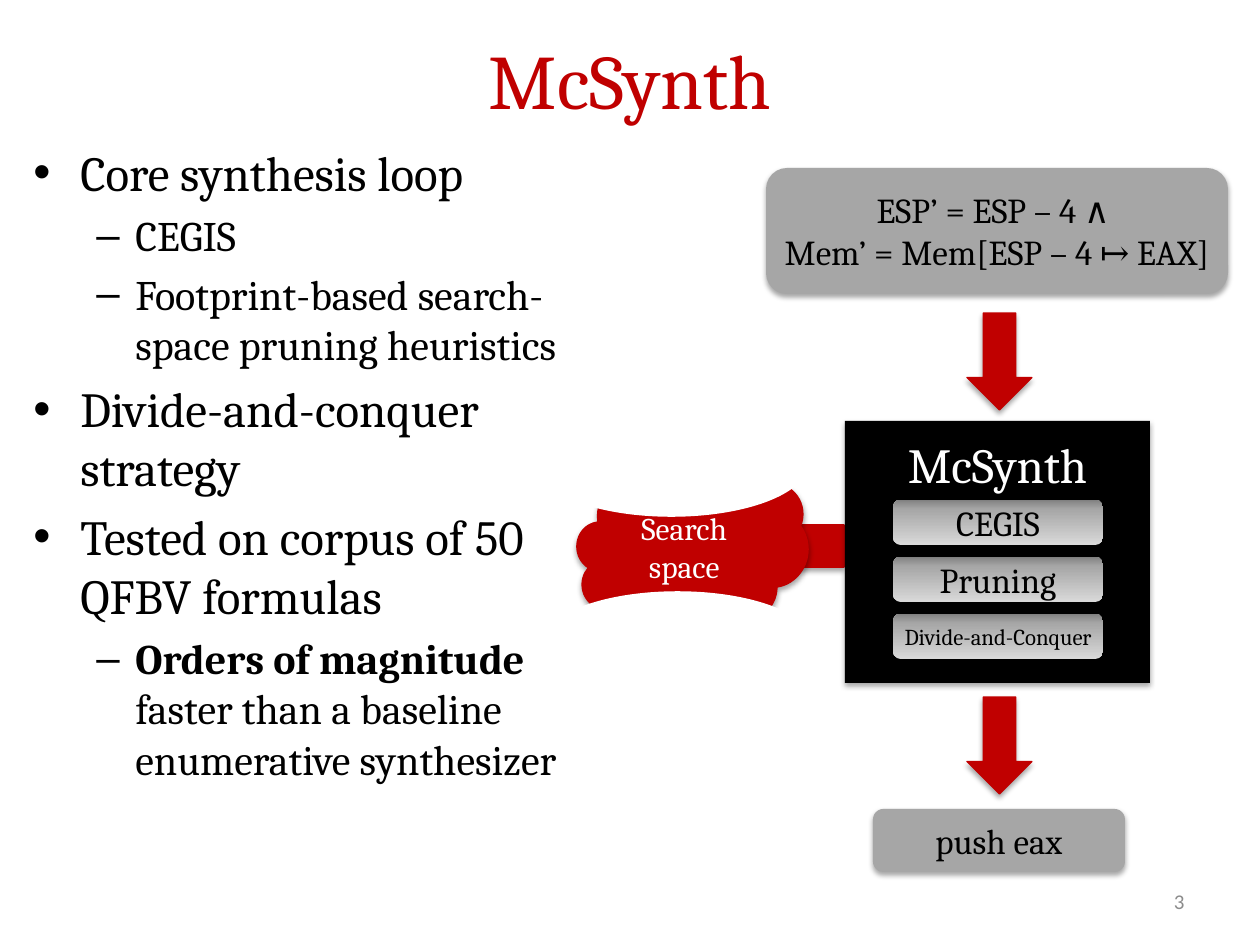
from dataclasses import dataclass
from lxml.etree import SubElement as Sub
from pptx import Presentation
from pptx.dml.color import RGBColor as RGB
from pptx.enum.shapes import MSO_SHAPE as Form
from pptx.enum.text import MSO_ANCHOR as Anchor, PP_ALIGN as Align
from pptx.oxml.ns import qn
from pptx.util import Pt


@dataclass(frozen=True)
class Theme:
    serif: str = "Cambria"
    sans: str = "Calibri"
    red: str = "C00000"
    black: str = "000000"
    white: str = "FFFFFF"
    gray: str = "A6A6A6"
    pale: str = "D9D9D9"
    dark: str = "808080"
    faint: str = "8C8C8C"
    title: int = 44
    head: int = 28
    sub: int = 24
    label: int = 20
    cloud: int = 18
    small: int = 13
    note: int = 12


T = Theme()
BULLETS = [
    (0, ["Core synthesis loop"]),
    (1, ["CEGIS"]),
    (1, ["Footprint-based search-space pruning heuristics"]),
    (0, ["Divide-and-conquer strategy"]),
    (0, ["Tested on corpus of 50 QFBV formulas"]),
    (1, ["Orders of magnitude", " faster than a baseline enumerative synthesizer"]),
]
# Per level: mark, left edge of the text, hanging indent, type size
LEVELS = [("•", 47, 47, T.head), ("–", 102, 39, T.sub)]


def px(n):
    return n * 914400 // 126


def style(para, size, color, align, face=T.serif):
    para.alignment = align
    font = para.font
    font.name, font.size = face, Pt(size)
    font.color.rgb = RGB.from_string(color)


def shade(shape):
    shape.shadow.inherit = False
    effects = shape._element.spPr.find(qn("a:effectLst"))
    outer = Sub(effects, qn("a:outerShdw"), blurRad=str(Pt(3.1)),
                dist=str(Pt(1.8)), dir="5400000", rotWithShape="0")
    color = Sub(outer, qn("a:srgbClr"), val=T.black)
    Sub(color, qn("a:alpha"), val="35000")


def blend(shape):
    """Fill from pale at the bottom to dark at the top."""
    shape.fill.gradient()
    shape.fill.gradient_angle = 90
    stops = shape._element.spPr.find(qn("a:gradFill")).find(qn("a:gsLst"))
    for stop in list(stops):
        stops.remove(stop)
    for pos, color in ((0, T.pale), (80, T.gray), (100, T.dark)):
        stop = Sub(stops, qn("a:gs"), pos=str(pos * 1000))
        Sub(stop, qn("a:srgbClr"), val=color)


def block(slide, form, box, fill=None, line=None, width=0.75, shadow=True):
    shape = slide.shapes.add_shape(form, *map(px, box))
    if fill:
        shape.fill.solid()
        shape.fill.fore_color.rgb = RGB.from_string(fill)
    else:
        blend(shape)
    if line:
        shape.line.color.rgb = RGB.from_string(line)
        shape.line.width = Pt(width)
    else:
        shape.line.fill.background()
    if shadow:
        shade(shape)
    else:
        shape.shadow.inherit = False
    return shape


def label(shape, lines, size, color=T.black, top=None):
    frame = shape.text_frame
    frame.word_wrap = True
    frame.margin_left = frame.margin_right = frame.margin_bottom = 0
    frame.margin_top = px(top or 0)
    frame.vertical_anchor = Anchor.TOP if top else Anchor.MIDDLE
    for i, line in enumerate(lines):
        para = frame.add_paragraph() if i else frame.paragraphs[0]
        para.text = line
        style(para, size, color, Align.CENTER)


def words(slide, box, anchor=Anchor.MIDDLE):
    frame = slide.shapes.add_textbox(*map(px, box)).text_frame
    frame.word_wrap = True
    frame.vertical_anchor = anchor
    return frame


def line(slide, box, text, *look):
    para = words(slide, box).paragraphs[0]
    para.text = text
    style(para, *look)


def bullets(slide, box):
    frame = words(slide, box, Anchor.TOP)
    for i, (level, parts) in enumerate(BULLETS):
        mark, left, hang, size = LEVELS[level]
        para = frame.add_paragraph() if i else frame.paragraphs[0]
        para.level = level
        para.space_before = Pt(size * 0.2)
        style(para, size, T.black, Align.LEFT)
        for part in parts:
            para.add_run().text = part
        if len(parts) > 1:
            para.runs[0].font.bold = True
        props = para._p.get_or_add_pPr()
        props.set("marL", str(px(left)))
        props.set("indent", str(-px(hang)))
        # Bullet tags come before the default run style
        rest = props.find(qn("a:defRPr"))
        face = Sub(props, qn("a:buFont"), typeface="Arial")
        char = Sub(props, qn("a:buChar"), char=mark)
        if rest is not None:
            rest.addprevious(face)
            rest.addprevious(char)


def main():
    deck = Presentation()
    deck.slide_width, deck.slide_height = px(1260), px(945)
    slide = deck.slides.add_slide(deck.slide_layouts[6])

    # Link from the search space to the tool
    block(slide, Form.RECTANGLE, (766, 525, 78, 42), T.red, T.red)

    # Title, bullets and page number
    line(slide, (21, 21, 1218, 116), "McSynth", T.title, T.red, Align.CENTER)
    bullets(slide, (21, 136, 588, 809))
    line(slide, (903, 876, 294, 50), "3", T.note, T.faint, Align.RIGHT, T.sans)

    # Input formula, tool and arrows
    goal = block(slide, Form.ROUNDED_RECTANGLE, (766, 168, 462, 126), T.gray)
    label(goal, ["ESP’ = ESP – 4 ∧ ", "Mem’ = Mem[ESP – 4 ↦ EAX]"], T.label)
    tool = block(slide, Form.RECTANGLE, (845, 421, 305, 262), T.black)
    label(tool, ["McSynth"], T.head, T.white, 14)
    for top in (313, 697):
        block(slide, Form.DOWN_ARROW, (967, top, 65, 97), T.red, T.red)

    # Search space
    cloud = block(slide, Form.CLOUD, (577, 462, 231, 179), T.red, T.red)
    label(cloud, ["Search space"], T.cloud, T.white)

    # Parts of the tool
    parts = [("CEGIS", T.label), ("Pruning", T.label),
             ("Divide-and-Conquer", T.small)]
    for i, (name, size) in enumerate(parts):
        part = block(slide, Form.ROUNDED_RECTANGLE, (893, 500 + 57 * i, 210, 45))
        label(part, [name], size)

    # White ovals trim the cloud above and below
    for left, top in ((536, 410), (542, 593)):
        block(slide, Form.OVAL, (left, top, 271, 105), T.white, T.white, 2, False)

    # Output instruction
    code = block(slide, Form.ROUNDED_RECTANGLE, (873, 809, 252, 63), T.gray)
    label(code, ["push eax"], T.label)
    deck.save("out.pptx")


if __name__ == "__main__":
    main()
